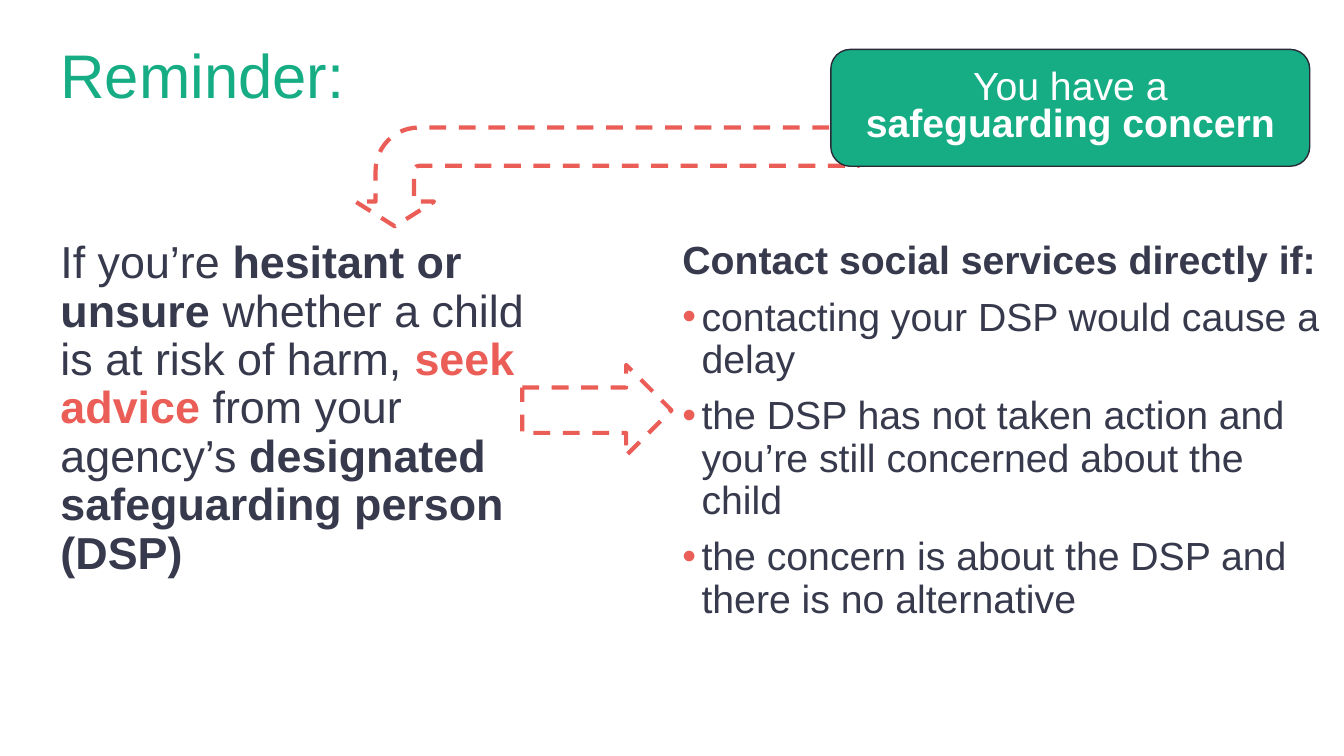
from lxml import etree
from pptx import Presentation
from pptx.dml.color import RGBColor
from pptx.enum.dml import MSO_LINE
from pptx.enum.shapes import MSO_SHAPE
from pptx.enum.text import MSO_ANCHOR, MSO_AUTO_SIZE, PP_ALIGN
from pptx.oxml.ns import qn
from pptx.util import Inches, Pt

LEFT, CENTER = PP_ALIGN.LEFT, PP_ALIGN.CENTER
TOP, MIDDLE = MSO_ANCHOR.TOP, MSO_ANCHOR.MIDDLE
NO_AUTOFIT = MSO_AUTO_SIZE.NONE
DASH = MSO_LINE.DASH
BENT_ARROW, RIGHT_ARROW = MSO_SHAPE.BENT_ARROW, MSO_SHAPE.RIGHT_ARROW
ROUNDED = MSO_SHAPE.ROUNDED_RECTANGLE

FONT = "Arial"
GREEN, CORAL, INK, OUTLINE, WHITE = "16AD85", "EB5E57", "37394C", "292A38", "FFFFFF"

ADVICE = [
    ("If you’re", {}),
    (" hesitant or unsure ", {"bold": True}),
    ("whether a child is at risk of harm, ", {}),
    ("seek advice ", {"bold": True, "color": CORAL}),
    ("from your agency’s ", {}),
    ("designated safeguarding person (DSP)", {"bold": True}),
]
CONTACT_HEADING = "Contact social services directly if:"
CONTACT_REASONS = [
    "contacting your DSP would cause a delay",
    "the DSP has not taken action and you’re still concerned about the child",
    "the concern is about the DSP and there is no alternative",
]


def rgb(value):
    return RGBColor.from_string(value)


def apply(target, values):
    for name, value in values.items():
        setattr(target, name, value)


def place(shape, left, top, width, height):
    apply(shape, {"left": Inches(left), "top": Inches(top),
                  "width": Inches(width), "height": Inches(height)})


def set_bullet(paragraph, bullet):
    """Give the paragraph a coral bullet, or remove the inherited one."""
    properties = paragraph._p.get_or_add_pPr()
    indent = Inches(0.19) if bullet else 0
    properties.set("marL", str(indent))
    properties.set("indent", str(-indent))
    if bullet:
        colour = etree.SubElement(properties, qn("a:buClr"))
        etree.SubElement(colour, qn("a:srgbClr")).set("val", CORAL)
        etree.SubElement(properties, qn("a:buFont")).set("typeface", FONT)
        etree.SubElement(properties, qn("a:buChar")).set("char", "•")
    else:
        etree.SubElement(properties, qn("a:buNone"))


def write_paragraph(paragraph, runs, size, color, align=LEFT, spacing=0.9,
                    before=0, bullet=False):
    set_bullet(paragraph, bullet)
    apply(paragraph, {"alignment": align, "line_spacing": spacing,
                      "space_before": Pt(before), "space_after": Pt(0)})
    for text, style in runs:
        run = paragraph.add_run()
        run.text = text
        apply(run.font, {"name": FONT, "size": Pt(size), "bold": style.get("bold", False)})
        run.font.color.rgb = rgb(style.get("color", color))


def prepare_frame(shape, anchor):
    frame = shape.text_frame
    apply(frame, {"word_wrap": True, "auto_size": NO_AUTOFIT, "vertical_anchor": anchor})
    return frame


def fill_placeholder(shape, box, anchor, runs, size, color):
    place(shape, *box)
    write_paragraph(prepare_frame(shape, anchor).paragraphs[0], runs, size, color)


def add_outlined(slide, kind, box, fill, line, width):
    shape = slide.shapes.add_shape(kind, *map(Inches, box))
    shape.shadow.inherit = False
    shape.fill.solid()
    shape.fill.fore_color.rgb = rgb(fill)
    shape.line.color.rgb = rgb(line)
    shape.line.width = Pt(width)
    return shape


def add_dashed_arrow(slide, kind, box):
    arrow = add_outlined(slide, kind, box, WHITE, CORAL, 3)
    arrow.line.dash_style = DASH
    return arrow


def add_arrow_to_advice(slide):
    arrow = add_dashed_arrow(slide, BENT_ARROW, (5.53, -0.74, 0.98, 4.99))
    for index, value in enumerate((0.388, 0.398, 0.25, 0.438)):
        arrow.adjustments[index] = value
    arrow.rotation = 270
    arrow._element.spPr.find(qn("a:xfrm")).set("flipH", "1")


def add_concern(slide):
    concern = add_outlined(slide, ROUNDED, (8.24, 0.49, 4.75, 1.16), GREEN, OUTLINE, 1)
    runs = [("You have a ", {}), ("safeguarding concern", {"bold": True})]
    write_paragraph(prepare_frame(concern, MIDDLE).paragraphs[0], runs, 28, WHITE,
                    align=CENTER, spacing=0.8)


def add_contact_list(slide):
    box = slide.shapes.add_textbox(*map(Inches, (6.67, 2.34, 6.52, 4.14)))
    frame = prepare_frame(box, TOP)
    write_paragraph(frame.paragraphs[0], [(CONTACT_HEADING, {"bold": True})], 28, INK)
    for reason in CONTACT_REASONS:
        write_paragraph(frame.add_paragraph(), [(reason, {})], 28, INK,
                        before=10, bullet=True)


def main():
    deck = Presentation()
    apply(deck, {"slide_width": Inches(13.33), "slide_height": Inches(7.5)})
    slide = deck.slides.add_slide(deck.slide_layouts[1])
    fill_placeholder(slide.shapes.title, (0.5, 0.4, 7.59, 0.75), MIDDLE,
                     [("Reminder:", {})], 44, GREEN)
    fill_placeholder(slide.placeholders[1], (0.5, 2.33, 4.99, 4.36), TOP,
                     ADVICE, 32, INK)
    add_arrow_to_advice(slide)
    add_concern(slide)
    add_contact_list(slide)
    add_dashed_arrow(slide, RIGHT_ARROW, (5.18, 3.62, 1.48, 0.9))
    deck.save("out.pptx")


if __name__ == "__main__":
    main()
